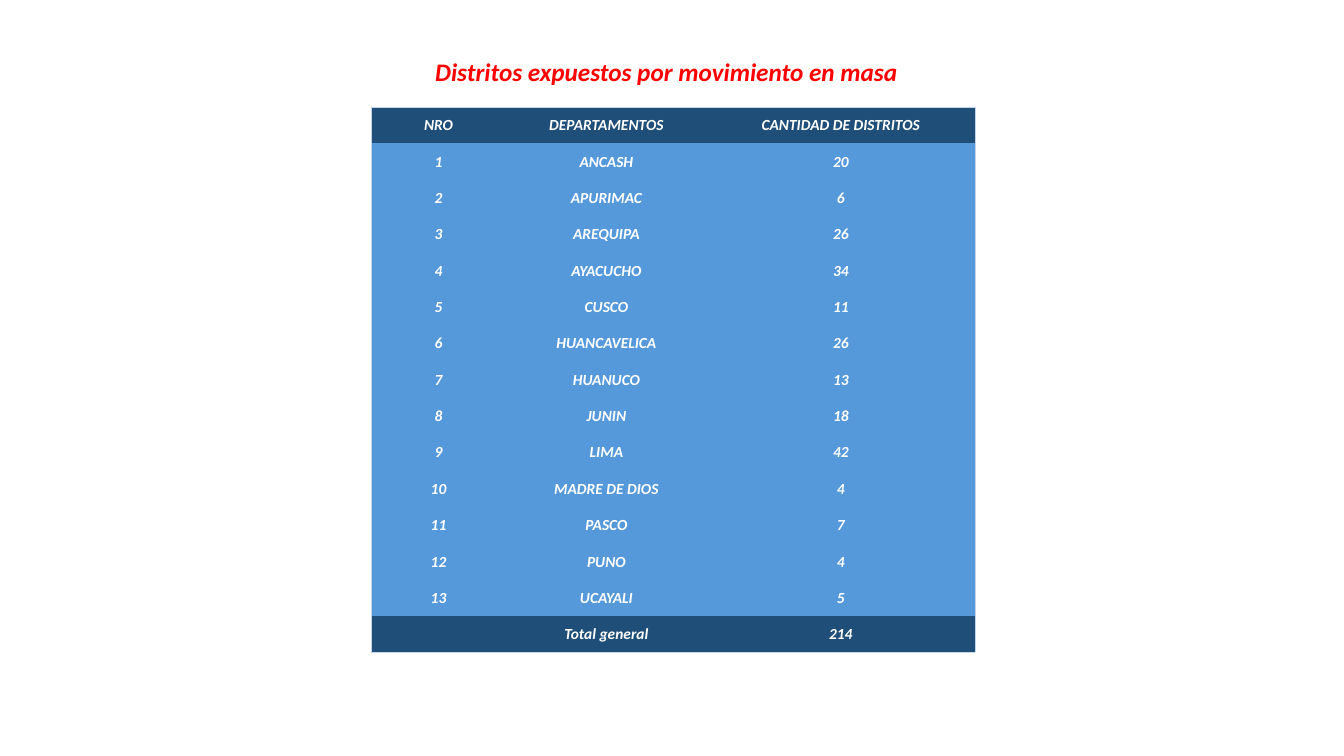
from dataclasses import dataclass

from lxml.etree import SubElement
from pptx import Presentation
from pptx.dml.color import RGBColor
from pptx.enum.text import MSO_ANCHOR, PP_ALIGN
from pptx.oxml.ns import qn
from pptx.util import Inches, Pt


@dataclass(frozen=True)
class Theme:
    font: str = "Calibri"
    title_size: int = 18
    cell_size: int = 11
    title: str = "FF0000"
    cell_text: str = "FFFFFF"
    dark: str = "1F4E79"
    body: str = "5599DB"
    border: str = "C4D5EB"
    border_width: float = 0.5


@dataclass(frozen=True)
class Row:
    number: str
    department: str
    districts: str
    fill: str


THEME = Theme()
DEPARTMENTS = [
    ("ANCASH", 20), ("APURIMAC", 6), ("AREQUIPA", 26), ("AYACUCHO", 34),
    ("CUSCO", 11), ("HUANCAVELICA", 26), ("HUANUCO", 13), ("JUNIN", 18),
    ("LIMA", 42), ("MADRE DE DIOS", 4), ("PASCO", 7), ("PUNO", 4),
    ("UCAYALI", 5),
]
ROWS = [
    Row("NRO", "DEPARTAMENTOS", "CANTIDAD DE DISTRITOS", THEME.dark),
    *(Row(str(n), name, str(count), THEME.body)
      for n, (name, count) in enumerate(DEPARTMENTS, 1)),
    Row("", "Total general", "214", THEME.dark),
]
COLUMN_WIDTHS = [1.34, 1.99, 2.66]
TABLE_HEIGHT = 5.41


def write(tf, text: str, size: int, color: str) -> None:
    """Centred bold italic text."""
    tf.text = text
    p = tf.paragraphs[0]
    p.alignment = PP_ALIGN.CENTER
    for r in p.runs:
        r.font.name = THEME.font
        r.font.size = Pt(size)
        r.font.bold = r.font.italic = True
        r.font.color.rgb = RGBColor.from_string(color)


def set_borders(cell, outer: dict[str, bool]) -> None:
    """Draw the outer sides and clear the inner ones."""
    tc_pr = cell._tc.get_or_add_tcPr()
    for side, drawn in outer.items():
        ln = SubElement(tc_pr, qn(f"a:ln{side}"), w=str(Pt(THEME.border_width)))
        if drawn:
            fill = SubElement(ln, qn("a:solidFill"))
            SubElement(fill, qn("a:srgbClr"), val=THEME.border)
        else:
            SubElement(ln, qn("a:noFill"))


def add_title(slide) -> None:
    box = slide.shapes.add_textbox(Inches(4.16), Inches(0.51), Inches(4.9), Inches(0.4))
    box.text_frame.word_wrap = False
    write(box.text_frame, "Distritos expuestos por movimiento en masa",
          THEME.title_size, THEME.title)


def add_district_table(slide) -> None:
    last_row, last_col = len(ROWS) - 1, len(COLUMN_WIDTHS) - 1
    table = slide.shapes.add_table(
        len(ROWS), len(COLUMN_WIDTHS), Inches(3.68), Inches(1.06),
        Inches(sum(COLUMN_WIDTHS)), Inches(TABLE_HEIGHT)).table
    table.first_row = table.horz_banding = False
    for column, width in zip(table.columns, COLUMN_WIDTHS):
        column.width = Inches(width)

    for i, row in enumerate(ROWS):
        table.rows[i].height = Inches(TABLE_HEIGHT / len(ROWS))
        for j, text in enumerate((row.number, row.department, row.districts)):
            cell = table.cell(i, j)
            cell.margin_left = cell.margin_right = cell.margin_top = Inches(0.01)
            cell.margin_bottom = 0
            cell.vertical_anchor = MSO_ANCHOR.MIDDLE
            write(cell.text_frame, text, THEME.cell_size, THEME.cell_text)
            set_borders(cell, {"L": j == 0, "R": j == last_col,
                               "T": i == 0, "B": i == last_row})
            cell.fill.solid()
            cell.fill.fore_color.rgb = RGBColor.from_string(row.fill)


def main() -> None:
    prs = Presentation()
    prs.slide_width, prs.slide_height = Inches(13.33), Inches(7.5)
    slide = prs.slides.add_slide(prs.slide_layouts[6])
    add_title(slide)
    add_district_table(slide)
    prs.save("out.pptx")


if __name__ == "__main__":
    main()
